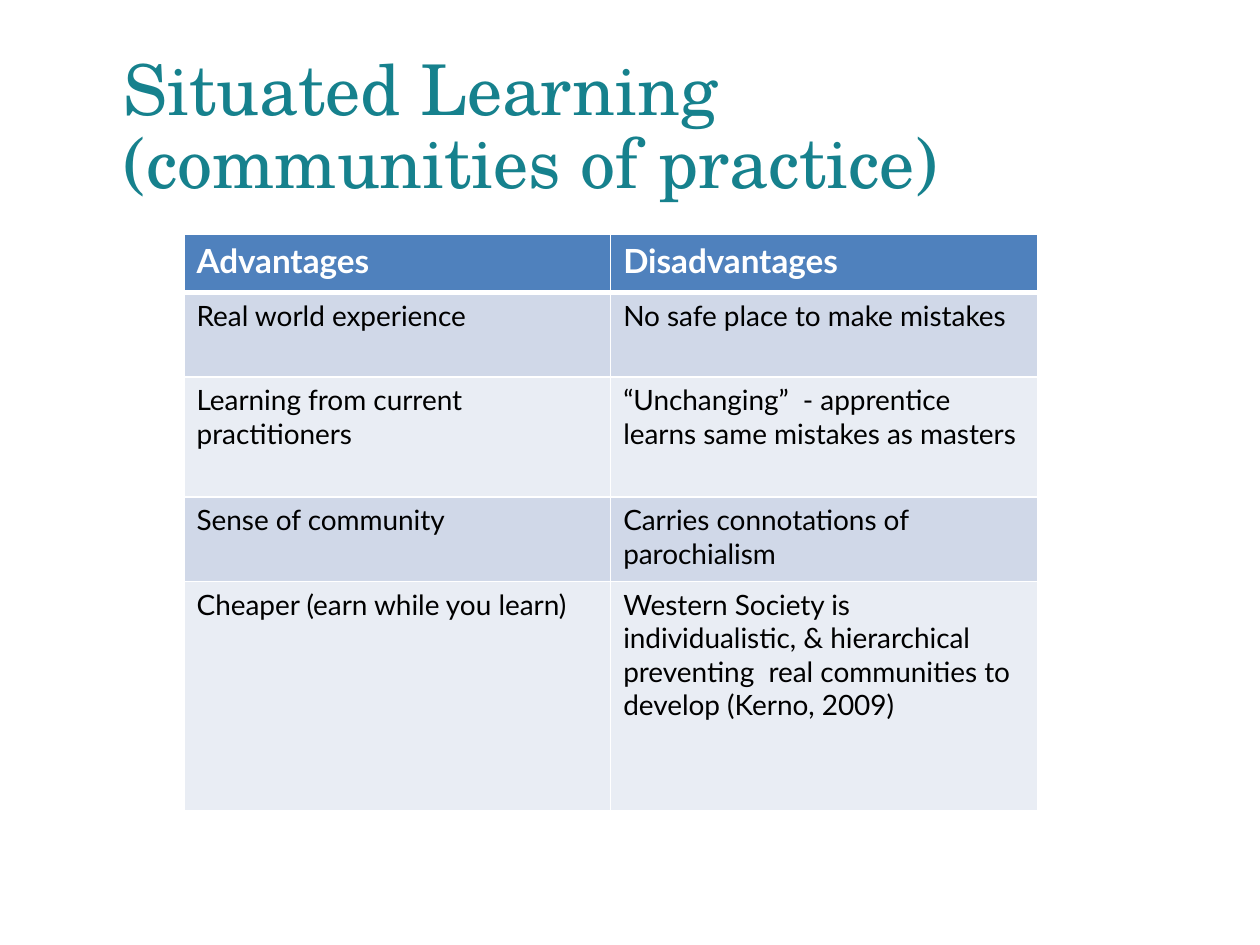
from dataclasses import dataclass

import pptx
import pptx.dml.color
import pptx.enum.text
import pptx.oxml
import pptx.oxml.ns
import pptx.util
from pptx.util import Cm


@dataclass(frozen=True)
class Theme:
    title_font: str = "TeX Gyre Schola"
    table_font: str = "Lato"
    title_size: int = 40
    title_leading: int = 42
    header_size: int = 19
    body_size: int = 16
    title: str = "16818D"
    header_text: str = "FFFFFF"
    body_text: str = "000000"
    header_fill: str = "4F81BD"
    bands: tuple[str, str] = ("D0D8E8", "E9EDF4")
    rule: str = "FFFFFF"
    rule_width: int = 1
    header_rule_width: int = 3


@dataclass(frozen=True)
class Comparison:
    advantage: str
    disadvantage: str
    height: float


@dataclass(frozen=True)
class TextStyle:
    font: str
    size: int
    color: str
    bold: bool = False


THEME = Theme()
TITLE_STYLE = TextStyle(THEME.title_font, THEME.title_size, THEME.title)
HEADER_STYLE = TextStyle(THEME.table_font, THEME.header_size, THEME.header_text, True)
BODY_STYLE = TextStyle(THEME.table_font, THEME.body_size, THEME.body_text)

COMPARISONS = (
    Comparison("Advantages", "Disadvantages", 1.17),
    Comparison("Real world experience", "No safe place to make mistakes", 1.7),
    Comparison(
        "Learning from current practitioners",
        "“Unchanging”  - apprentice learns same mistakes as masters",
        2.42,
    ),
    Comparison("Sense of community", "Carries connotations of parochialism", 1.7),
    Comparison(
        "Cheaper (earn while you learn)",
        "Western Society is individualistic, & hierarchical  preventing  "
        "real communities to develop (Kerno, 2009)",
        4.62,
    ),
)


def rgb(value: str) -> pptx.dml.color.RGBColor:
    return pptx.dml.color.RGBColor.from_string(value)


def add_run(paragraph, wording: str, style: TextStyle) -> None:
    run = paragraph.add_run()
    run.text = wording
    run.font.name = style.font
    run.font.size = pptx.util.Pt(style.size)
    run.font.bold = style.bold
    run.font.color.rgb = rgb(style.color)


def add_title(slide, wording: str) -> None:
    title = slide.shapes.add_textbox(Cm(2.49), Cm(1.12), Cm(18.11), Cm(1.8))
    frame = title.text_frame
    frame.word_wrap = True
    frame.vertical_anchor = pptx.enum.text.MSO_ANCHOR.TOP
    frame.margin_left = frame.margin_right = 0
    frame.margin_top = frame.margin_bottom = 0
    paragraph = frame.paragraphs[0]
    paragraph.line_spacing = pptx.util.Pt(THEME.title_leading)
    add_run(paragraph, wording, TITLE_STYLE)


def add_borders(cell, top: int, bottom: int) -> None:
    properties = cell._tc.get_or_add_tcPr()
    widths = {"lnL": THEME.rule_width, "lnR": THEME.rule_width, "lnT": top, "lnB": bottom}
    for position, (side, width) in enumerate(widths.items()):
        border = pptx.oxml.parse_xml(
            f'<a:{side} {pptx.oxml.ns.nsdecls("a")} w="{pptx.util.Pt(width)}">'
            f'<a:solidFill><a:srgbClr val="{THEME.rule}"/></a:solidFill></a:{side}>'
        )
        properties.insert(position, border)


def fill_cell(cell, wording: str, row: int) -> None:
    is_header = row == 0
    cell.fill.solid()
    cell.fill.fore_color.rgb = rgb(
        THEME.header_fill if is_header else THEME.bands[(row - 1) % 2]
    )
    add_borders(
        cell,
        top=THEME.header_rule_width if row == 1 else THEME.rule_width,
        bottom=THEME.header_rule_width if is_header else THEME.rule_width,
    )
    add_run(
        cell.text_frame.paragraphs[0], wording, HEADER_STYLE if is_header else BODY_STYLE
    )


def add_comparison_table(slide, comparisons: tuple[Comparison, ...]) -> None:
    height = sum(comparison.height for comparison in comparisons)
    table = slide.shapes.add_table(
        len(comparisons), 2, Cm(3.71), Cm(4.73), Cm(17.2), Cm(height)
    ).table
    for row, comparison in enumerate(comparisons):
        table.rows[row].height = Cm(comparison.height)
        fill_cell(table.cell(row, 0), comparison.advantage, row)
        fill_cell(table.cell(row, 1), comparison.disadvantage, row)


def main() -> None:
    presentation = pptx.Presentation()
    presentation.slide_width = Cm(25.4)
    presentation.slide_height = Cm(19.05)
    slide = presentation.slides.add_slide(presentation.slide_layouts[6])
    add_title(slide, "Situated Learning (communities of practice)")
    add_comparison_table(slide, COMPARISONS)
    presentation.save("out.pptx")


if __name__ == "__main__":
    main()
